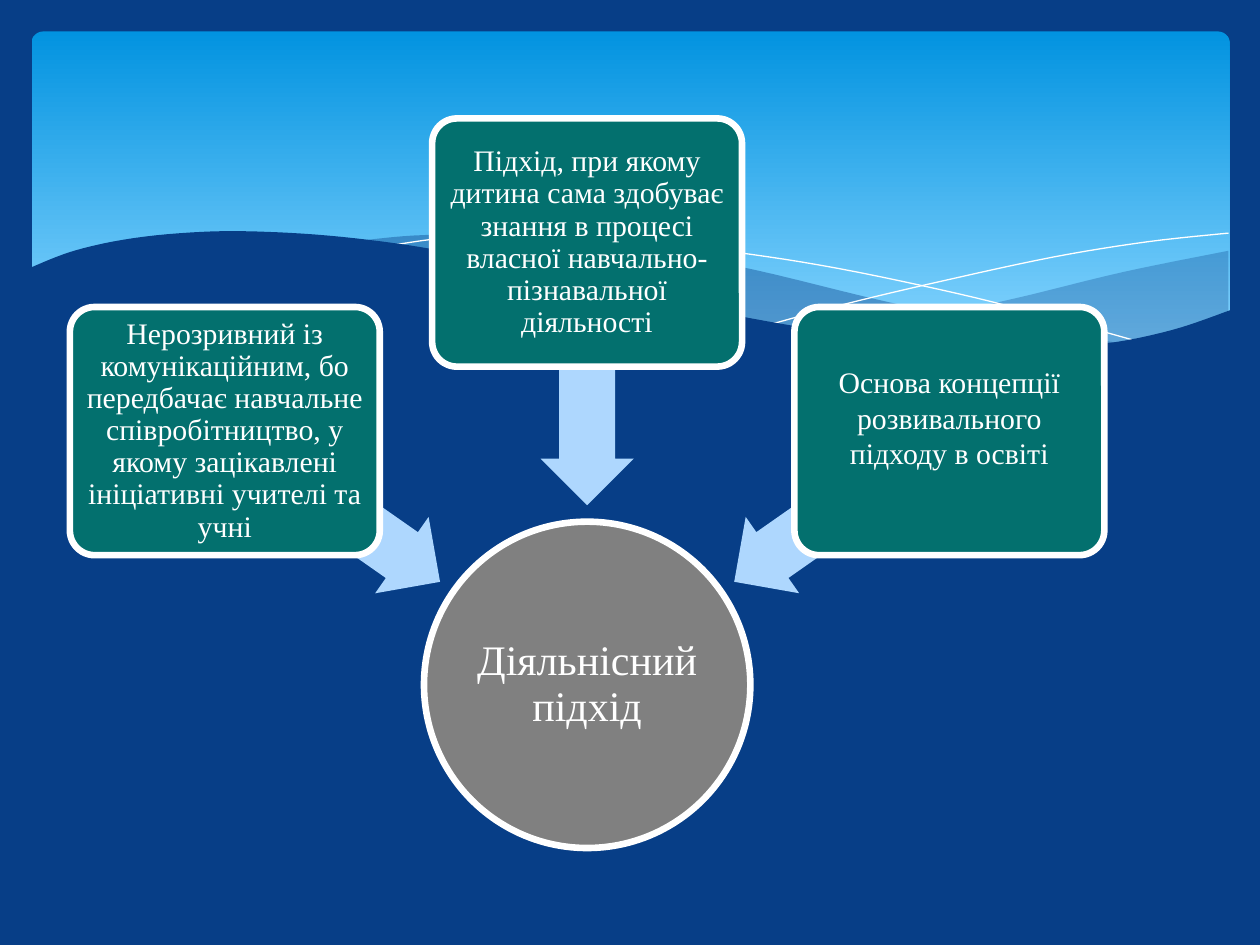
from dataclasses import dataclass
from math import cos, radians, sin

from lxml.etree import SubElement
from pptx import Presentation
from pptx.dml.color import RGBColor
from pptx.enum.shapes import MSO_SHAPE
from pptx.enum.text import MSO_ANCHOR, PP_ALIGN
from pptx.oxml.ns import qn
from pptx.util import Inches, Pt


@dataclass(frozen=True)
class Theme:
    """Colours, font and sizes of the slide."""
    navy: RGBColor = RGBColor.from_string("073E87")
    sky_top: RGBColor = RGBColor.from_string("0293E0")
    sky_bottom: RGBColor = RGBColor.from_string("83D3FE")
    card: RGBColor = RGBColor.from_string("03706E")
    hub: RGBColor = RGBColor.from_string("808080")
    arrow: RGBColor = RGBColor.from_string("AED7FE")
    white: RGBColor = RGBColor.from_string("FFFFFF")
    font: str = "Times New Roman"
    hub_size: Pt = Pt(24)
    card_size: Pt = Pt(17)
    outline: Pt = Pt(3.78)
    hairline: Pt = Pt(0)


THEME = Theme()

FAR_WAVE = [
    [(9.5, 1.74), (8.66, 1.91), (7.8, 2.12), (7.04, 2.28), (6.36, 2.4)],
    [(6.36, 2.4), (6.93, 2.47), (7.44, 2.52), (7.89, 2.53), (8.38, 2.5),
     (8.8, 2.44), (9.17, 2.34), (9.5, 2.22)],
]
MIDDLE_WAVE = [
    [(2.61, 1.66), (3.03, 1.62), (3.55, 1.61), (4.17, 1.64), (4.89, 1.73),
     (5.73, 1.89), (6.81, 2.15), (7.82, 2.35), (8.68, 2.48)],
    [(8.68, 2.48), (8.23, 2.52), (7.71, 2.53), (7.11, 2.5), (6.4, 2.41),
     (5.41, 2.23), (4.24, 1.97), (3.37, 1.78), (2.61, 1.66)],
]
FALLING_LINE = [
    [(2.84, 1.7), (3.28, 1.64), (3.91, 1.62), (4.64, 1.65), (5.57, 1.75),
     (6.4, 1.88), (7.35, 2.08), (8.06, 2.26), (8.82, 2.47)],
]
RISING_LINE = [
    [(5.88, 2.32), (6.47, 2.16), (7.23, 1.98), (8.11, 1.79), (8.85, 1.67),
     (9.5, 1.6)],
]
FRONT_WAVE = [
    [(9.52, 2.21), (9.05, 2.37), (8.5, 2.48), (7.84, 2.52), (7.01, 2.47),
     (6.01, 2.33), (5.04, 2.14), (3.93, 1.88), (3.14, 1.72), (2.46, 1.63),
     (1.86, 1.59), (1.36, 1.59), (0.81, 1.64), (0.34, 1.74), (-0.02, 1.88)],
    [(-0.02, 3.04), (9.52, 3.04)],
]

HUB_TEXT = "Діяльнісний підхід"
CARDS = [
    (215, "Нерозривний із комунікаційним, бо передбачає навчальне співробітництво, "
          "у якому зацікавлені ініціативні учителі та учні", {}),
    (270, "Підхід, при якому дитина сама здобуває знання в процесі власної "
          "навчально-пізнавальної діяльності", {}),
    (325, "Основа концепції розвивального підходу в освіті",
     {"line_spacing": 1.0, "margin_bottom": Inches(0.26)}),
]


def smooth(knots, steps=6):
    """Return points on a Catmull-Rom curve through the knots."""
    padded = [knots[0], *knots, knots[-1]]
    curve = [knots[0]]
    for a, b, c, d in zip(padded, padded[1:], padded[2:], padded[3:]):
        for t in (step / steps for step in range(1, steps + 1)):
            curve.append(tuple(
                (2 * q + (r - p) * t + (2 * p - 5 * q + 4 * r - s) * t ** 2
                 + (3 * q - p - 3 * r + s) * t ** 3) / 2
                for p, q, r, s in zip(a, b, c, d)))
    return curve


def paint(shape, fill=None, line=None, width=THEME.outline, opacity=None):
    """Give a shape its fill, outline and opacity, without shadow."""
    shape.shadow.inherit = False
    if fill is None:
        shape.fill.background()
    else:
        shape.fill.solid()
        shape.fill.fore_color.rgb = fill
    if opacity is not None:
        colour = shape.fill._xPr.find(qn("a:solidFill"))[0]
        SubElement(colour, qn("a:alpha"), val=str(opacity * 1000))
    if line is None:
        shape.line.fill.background()
    else:
        shape.line.color.rgb = line
        shape.line.width = width


def write(shape, text, size, margin, line_spacing=0.9, **frame_format):
    """Write centred text inside a shape."""
    frame = shape.text_frame
    paragraph = frame.paragraphs[0]
    run = paragraph.add_run()
    run.text = text
    run.font.color.rgb = THEME.white
    sides = ("left", "top", "right", "bottom")
    margins = {f"margin_{side}": margin for side in sides}
    formats = [
        (frame, {"word_wrap": True, "vertical_anchor": MSO_ANCHOR.MIDDLE,
                 **margins, **frame_format}),
        (paragraph, {"alignment": PP_ALIGN.CENTER, "line_spacing": line_spacing}),
        (run.font, {"name": THEME.font, "size": size}),
    ]
    for target, values in formats:
        for attribute, value in values.items():
            setattr(target, attribute, value)


def add_centred(slide, preset, centre, size):
    """Add a preset shape around a centre point."""
    (x, y), (width, height) = centre, size
    return slide.shapes.add_shape(
        preset, int(x - width / 2), int(y - height / 2), width, height)


def add_wave(slide, left, top, edges, closed=True, **look):
    """Draw smooth edges joined into one outline, offset from a corner."""
    points = [(left + Inches(x), top + Inches(y))
              for edge in edges for x, y in smooth(edge)]
    builder = slide.shapes.build_freeform(*points[0], scale=1.0)
    builder.add_line_segments(points[1:], close=closed)
    paint(builder.convert_to_shape(), **look)


def add_banner(slide, left, top, width, height):
    """Draw the sky panel and the waves that cross it."""
    sky = slide.shapes.add_shape(
        MSO_SHAPE.ROUNDED_RECTANGLE, left, top, width, height)
    paint(sky)
    sky.adjustments[0] = 0.034
    sky.fill.gradient()
    sky.fill.gradient_angle = 270
    stops = [(0, THEME.sky_top), (0.9, THEME.sky_bottom)]
    for stop, (position, colour) in zip(sky.fill.gradient_stops, stops):
        stop.position = position
        stop.color.rgb = colour

    hairline = {"closed": False, "line": THEME.white, "width": THEME.hairline}
    waves = [
        (FAR_WAVE, {"fill": THEME.navy, "opacity": 29}),
        (MIDDLE_WAVE, {"fill": THEME.navy, "opacity": 40}),
        (FALLING_LINE, hairline),
        (RISING_LINE, hairline),
        (FRONT_WAVE, {"fill": THEME.navy}),
    ]
    for edges, look in waves:
        add_wave(slide, left, top, edges, **look)


def add_radial_diagram(slide, left, top, width, height):
    """Place the hub at the bottom centre, with cards pointing at it."""
    hub_size = Inches(2.59)
    hub_centre = (left + width / 2, top + height - hub_size / 2)
    card_size = (Inches(2.46), Inches(1.97))
    arrow_size = (Inches(2.09), Inches(0.74))
    card_reach, arrow_reach = Inches(3.51), Inches(2.47)

    def on_ring(angle, reach):
        """Return the point at an angle and distance from the hub."""
        x, y = hub_centre
        return x + reach * cos(radians(angle)), y + reach * sin(radians(angle))

    hub = add_centred(slide, MSO_SHAPE.OVAL, hub_centre, (hub_size, hub_size))
    paint(hub, THEME.hub, THEME.white)
    write(hub, HUB_TEXT, THEME.hub_size, Inches(0.02))

    for angle, text, text_format in CARDS:
        arrow = add_centred(
            slide, MSO_SHAPE.LEFT_ARROW, on_ring(angle, arrow_reach), arrow_size)
        arrow.rotation = angle
        arrow.adjustments[0] = 0.6
        arrow.adjustments[1] = 0.5
        paint(arrow, THEME.arrow)
        card = add_centred(
            slide, MSO_SHAPE.ROUNDED_RECTANGLE, on_ring(angle, card_reach), card_size)
        card.adjustments[0] = 0.1
        paint(card, THEME.card, THEME.white)
        write(card, text, THEME.card_size, Inches(0.04), **text_format)


def main():
    """Build and save the slide."""
    deck = Presentation()
    deck.slide_width, deck.slide_height = Inches(10), Inches(7.5)
    slide = deck.slides.add_slide(deck.slide_layouts[6])
    slide.background.fill.solid()
    slide.background.fill.fore_color.rgb = THEME.navy
    add_banner(slide, Inches(0.25), Inches(0.25), Inches(9.51), Inches(2.7))
    add_radial_diagram(slide, Inches(0.55), Inches(0.94), Inches(8.22), Inches(5.79))
    deck.save("out.pptx")


if __name__ == "__main__":
    main()
